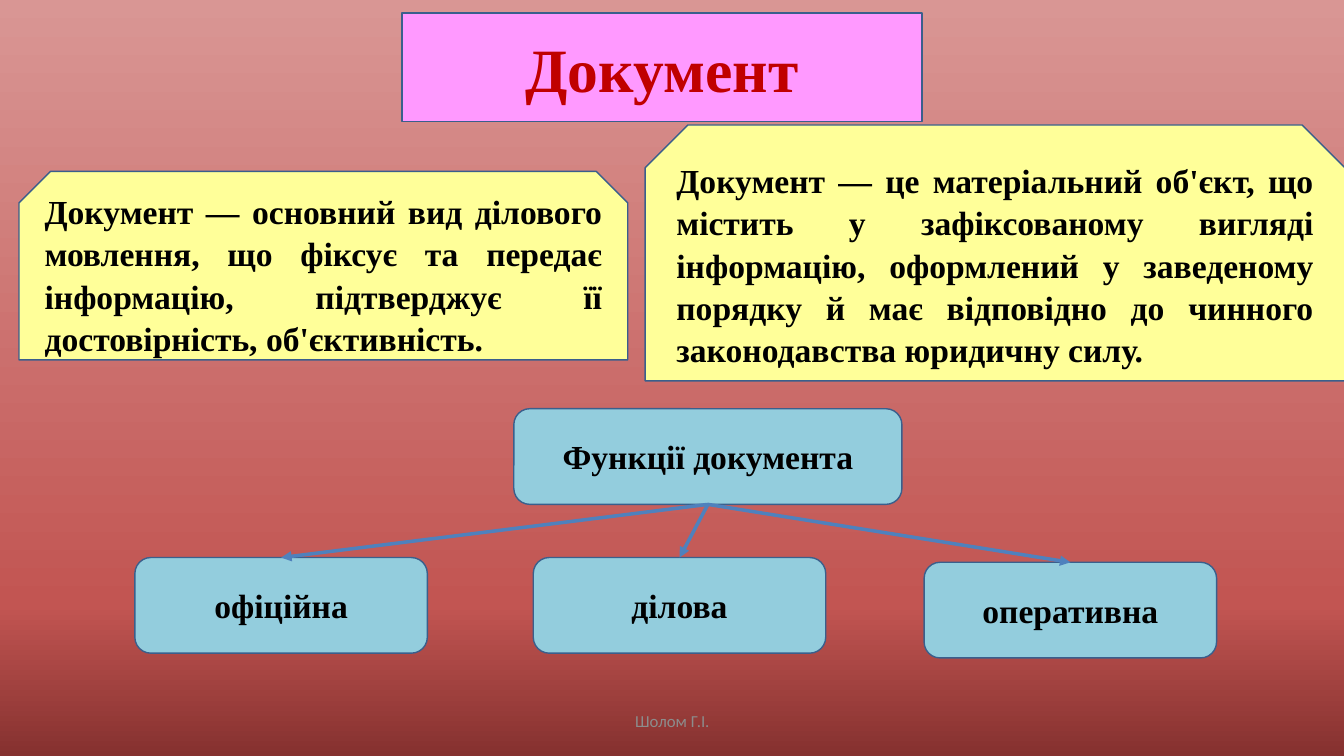
from copy import deepcopy

from pptx import Presentation
from pptx import util as u
from pptx.dml.color import RGBColor
from pptx.enum import shapes, text
from pptx.oxml import parse_xml
from pptx.oxml import ns

HUES = {
    "dark": "85312F", "red": "C25552", "rose": "D99694",
    "pink": "FF99FF", "lemon": "FFFF99", "sky": "93CDDD",
    "edge": "3A5F8C", "arrow": "4F81BD",
    "title": "C00000", "ink": "000000", "grey": "8C8C8C",
}
SERIF = "Times New Roman"
SNIP = shapes.MSO_SHAPE.SNIP_2_SAME_RECTANGLE
ROUND = shapes.MSO_SHAPE.ROUNDED_RECTANGLE
ALIGN = text.PP_ALIGN


def hue(name):
    return RGBColor.from_string(HUES[name])


def write(shape, words, size=24, color="ink", font=SERIF, bold=True,
          align=ALIGN.CENTER, space=1.0):
    frame = shape.text_frame
    frame.word_wrap = True
    frame.auto_size = text.MSO_AUTO_SIZE.NONE
    frame.vertical_anchor = text.MSO_ANCHOR.MIDDLE
    para = frame.paragraphs[0]
    para.alignment = align
    para.line_spacing = space
    run = para.add_run()
    run.text = words
    run.font.size = u.Pt(size)
    run.font.name = font
    run.font.bold = bold
    run.font.color.rgb = hue(color)


def paint(shape, fill):
    shape.fill.solid()
    shape.fill.fore_color.rgb = hue(fill)
    shape.line.color.rgb = hue("edge")
    shape.line.width = u.Pt(1)


def panel(slide, kind, box, fill, words, **style):
    shape = slide.shapes.add_shape(kind, *map(u.Cm, box))
    shape.shadow.inherit = False
    paint(shape, fill)
    write(shape, words, **style)
    return shape


def arrow(slide, start, end):
    line = slide.shapes.add_connector(shapes.MSO_CONNECTOR.STRAIGHT, 0, 0, 0, 0)
    line.begin_connect(start, 2)
    line.end_connect(end, 0)
    line.line.color.rgb = hue("arrow")
    line.line.width = u.Pt(2.5)
    line.line._get_or_add_ln().append(
        parse_xml(f'<a:tailEnd {ns.nsdecls("a")} type="triangle"/>'))
    line.element.spPr.append(parse_xml(f'<a:effectLst {ns.nsdecls("a")}/>'))


def backdrop(slide):
    fill = slide.background.fill
    fill.gradient()
    fill.gradient_angle = 90
    stops = slide.element.xpath(".//a:gsLst")[0]
    stops.append(deepcopy(stops[0]))
    tones = (0, "dark"), (0.2, "red"), (1, "rose")
    for stop, (place, tone) in zip(fill.gradient_stops, tones):
        stop.position = place
        stop.color.rgb = hue(tone)


def heading(slide, box, words):
    title = slide.shapes.title
    title.left, title.top, title.width, title.height = map(u.Cm, box)
    title.element.spPr.insert(1, parse_xml(
        f'<a:prstGeom {ns.nsdecls("a")} prst="snip2SameRect"><a:avLst/></a:prstGeom>'))
    paint(title, "pink")
    write(title, words, size=44, color="title")


def tree(slide, box, root, leaves):
    left, top, width, high = box
    hub = panel(slide, ROUND, (left + 9.55, top, 9.78, high), "sky", root)
    wide = 7.37
    for name, across, down in leaves:
        leaf = panel(slide, ROUND, (left + across, top + down, wide, high),
                     "sky", name)
        arrow(slide, hub, leaf)


def footer(slide, box, words):
    note = slide.shapes.add_textbox(*map(u.Cm, box))
    write(note, words, size=12, color="grey", font="Calibri", bold=False)


def main():
    deck = Presentation()
    deck.slide_width, deck.slide_height = u.Cm(33.87), u.Cm(19.05)
    slide = deck.slides.add_slide(deck.slide_layouts[5])
    backdrop(slide)
    heading(slide, (10.13, 0.33, 13.11, 2.74), "Документ")
    body = {"align": ALIGN.JUSTIFY, "space": 1.05}
    panel(slide, SNIP, (0.48, 4.32, 15.34, 4.75), "lemon",
          "Документ — основний вид ділового мовлення, що фіксує та передає "
          "інформацію, підтверджує її достовірність, об'єктивність.", **body)
    panel(slide, SNIP, (16.26, 3.15, 17.63, 6.45), "lemon",
          "Документ — це матеріальний об'єкт, що містить у зафіксованому "
          "вигляді інформацію, оформлений у заведеному порядку й має "
          "відповідно до чинного законодавства юридичну силу.", **body)
    tree(slide, (3.4, 10.3, 27.26, 2.41), "Функції документа",
         [("офіційна", 0, 3.75), ("ділова", 10.04, 3.75),
          ("оперативна", 19.89, 3.87)])
    footer(slide, (11.23, 17.65, 11.43, 1.02), "Шолом Г.І.")
    deck.save("out.pptx")


if __name__ == "__main__":
    main()
